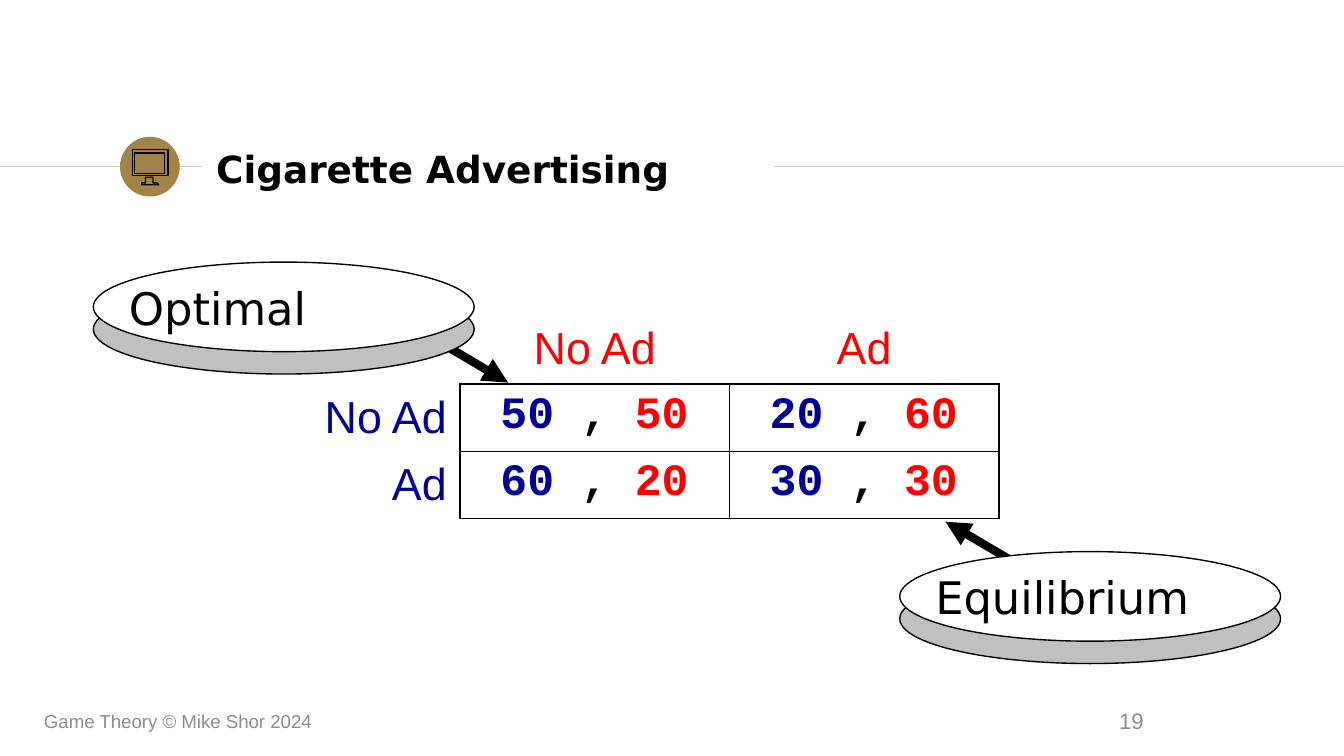
from lxml import etree
from pptx import Presentation
from pptx.dml.color import RGBColor
from pptx.enum import shapes as kinds, text as txt
from pptx.oxml import ns
from pptx.util import Pt

HUES = {
    "black": "000000", "white": "FFFFFF", "blue": "000099", "red": "FF0000",
    "gold": "A28448", "shade": "C0C0C0", "rule": "CCCCCC", "note": "8C8C8C",
}
LEFT, RIGHT, MID = txt.PP_ALIGN.LEFT, txt.PP_ALIGN.RIGHT, txt.PP_ALIGN.CENTER
ADS = ["No Ad", "Ad"]
PAYS = [[(50, 50), (20, 60)], [(60, 20), (30, 30)]]


def rgb(hue):
    return RGBColor.from_string(HUES[hue])


def style(font, name, size, hue, bold=False):
    font.name, font.size, font.bold = name, Pt(size), bold
    font.color.rgb = rgb(hue)


def add_text(slide, words, box, name, size, hue, bold=False, align=LEFT, pad=(7.2, 3.6)):
    frame = slide.shapes.add_textbox(*map(Pt, box)).text_frame
    frame.word_wrap = True
    frame.vertical_anchor = txt.MSO_ANCHOR.MIDDLE
    frame.margin_left = frame.margin_right = Pt(pad[0])
    frame.margin_top = frame.margin_bottom = Pt(pad[1])
    para = frame.paragraphs[0]
    para.text, para.alignment = words, align
    style(para.font, name, size, hue, bold)


def add_line(slide, start, end, hue, width, arrow=False):
    line = slide.shapes.add_connector(
        kinds.MSO_CONNECTOR.STRAIGHT, *map(Pt, start + end))
    line.line.color.rgb = rgb(hue)
    line.line.width = Pt(width)
    if arrow:
        etree.SubElement(line.line._get_or_add_ln(), ns.qn("a:tailEnd"), type="triangle")
    etree.SubElement(line._element.spPr, ns.qn("a:effectLst"))


def add_oval(slide, box, fill, edge=None):
    oval = slide.shapes.add_shape(kinds.MSO_SHAPE.OVAL, *map(Pt, box))
    oval.shadow.inherit = False
    oval.fill.solid()
    oval.fill.fore_color.rgb = rgb(fill)
    if edge:
        oval.line.color.rgb = rgb(edge)
        oval.line.width = Pt(0.75)
    else:
        oval.line.fill.background()


def add_path(slide, *loops):
    """Draw the closed loops of points as one unfilled outline."""
    path = slide.shapes.build_freeform(*loops[0][0], scale=Pt(1))
    path.add_line_segments(loops[0][1:])
    for loop in loops[1:]:
        path.move_to(*loop[0])
        path.add_line_segments(loop[1:])
    shape = path.convert_to_shape()
    shape.shadow.inherit = False
    shape.fill.background()
    shape.line.color.rgb = rgb("black")
    shape.line.width = Pt(0.75)


def frame_points(left, top, right, low):
    return [(left, top), (right, top), (right, low), (left, low)]


def add_icon(slide):
    add_oval(slide, (64.3, 73.3, 32, 32), "gold")
    add_path(slide, [(78.5, 95), (78.5, 97.8), (76.2, 97.8), (75.6, 98.8),
                     (84.9, 98.8), (84.2, 97.8), (81.6, 97.8), (81.6, 95)])
    add_path(slide, frame_points(70.7, 80.2, 89.5, 94.5),
             frame_points(72.2, 82, 87.9, 92.9))


def add_callout(slide, words, left, top, start, end):
    """Draw an arrow, with a two-layer oval and its label above it."""
    add_line(slide, start, end, "black", 4.5, arrow=True)
    for drop, fill in ((12, "shade"), (0, "white")):
        add_oval(slide, (left, top + drop, 204, 48), fill, "black")
    add_text(slide, words, (left + 12, top + 6.3, 180, 36), "DejaVu Sans", 24, "black")


def set_edges(cell, sides):
    """Give a cell black borders on the named sides and none elsewhere."""
    props = cell._tc.get_or_add_tcPr()
    for spot, side in enumerate("LRTB"):
        edge = etree.Element(ns.qn("a:ln" + side), w=str(Pt(1)))
        if side in sides:
            fill = etree.SubElement(edge, ns.qn("a:solidFill"))
            etree.SubElement(fill, ns.qn("a:srgbClr"), val=HUES["black"])
        else:
            etree.SubElement(edge, ns.qn("a:noFill"))
        props.insert(spot, edge)


def set_label(cell, words, align, hue):
    para = cell.text_frame.paragraphs[0]
    para.text, para.alignment = words, align
    style(para.font, "Arial", 24, hue)


def set_pay(cell, pair):
    para = cell.text_frame.paragraphs[0]
    parts = [(" ", "black"), (str(pair[0]), "blue"),
             (" , ", "black"), (str(pair[1]), "red")]
    for words, hue in parts:
        run = para.add_run()
        run.text = words
        style(run.font, "Courier New", 24, hue, True)


def add_game(slide):
    table = slide.shapes.add_table(
        3, 3, Pt(157.8), Pt(169.8), Pt(377.3), Pt(103.5)).table
    table.first_row = table.horz_banding = False
    for col, width in zip(table.columns, (88.7, 144.2, 144.4)):
        col.width = Pt(width)
    for row in table.rows:
        row.height = Pt(34.5)
    for r in range(3):
        for c in range(3):
            cell = table.cell(r, c)
            cell.fill.background()
            if r and c:
                set_pay(cell, PAYS[r - 1][c - 1])
                set_edges(cell, "LRTB")
            elif c:
                set_label(cell, ADS[c - 1], MID, "red")
                set_edges(cell, "B")
            elif r:
                set_label(cell, ADS[r - 1], RIGHT, "blue")
                cell.vertical_anchor = txt.MSO_ANCHOR.MIDDLE
                set_edges(cell, "R")
            else:
                set_edges(cell, "")


def main():
    deck = Presentation()
    deck.slide_width, deck.slide_height = Pt(720), Pt(405)
    slide = deck.slides.add_slide(deck.slide_layouts[6])
    add_line(slide, (0, 89.2), (108.5, 89.2), "rule", 0.75)
    add_line(slide, (414.7, 89.2), (720, 89.2), "rule", 0.75)
    add_icon(slide)
    add_text(slide, "Cigarette Advertising", (108.7, 72.9, 305.5, 34.5),
             "DejaVu Sans", 20, "black", bold=True, pad=(7.2, 7.2))
    add_game(slide)
    add_callout(slide, "Equilibrium", 482, 295.5, (551.5, 306), (506.5, 279.5))
    add_callout(slide, "Optimal", 50, 140.4, (227.5, 178.5), (272.2, 205))
    add_text(slide, "Game Theory © Mike Shor 2024", (16.5, 375.3, 243.5, 21.6),
             "Arial", 10, "note")
    add_text(slide, "19", (457.9, 375.3, 162, 21.6), "Arial", 12, "note", align=RIGHT)
    deck.save("out.pptx")


if __name__ == "__main__":
    main()
